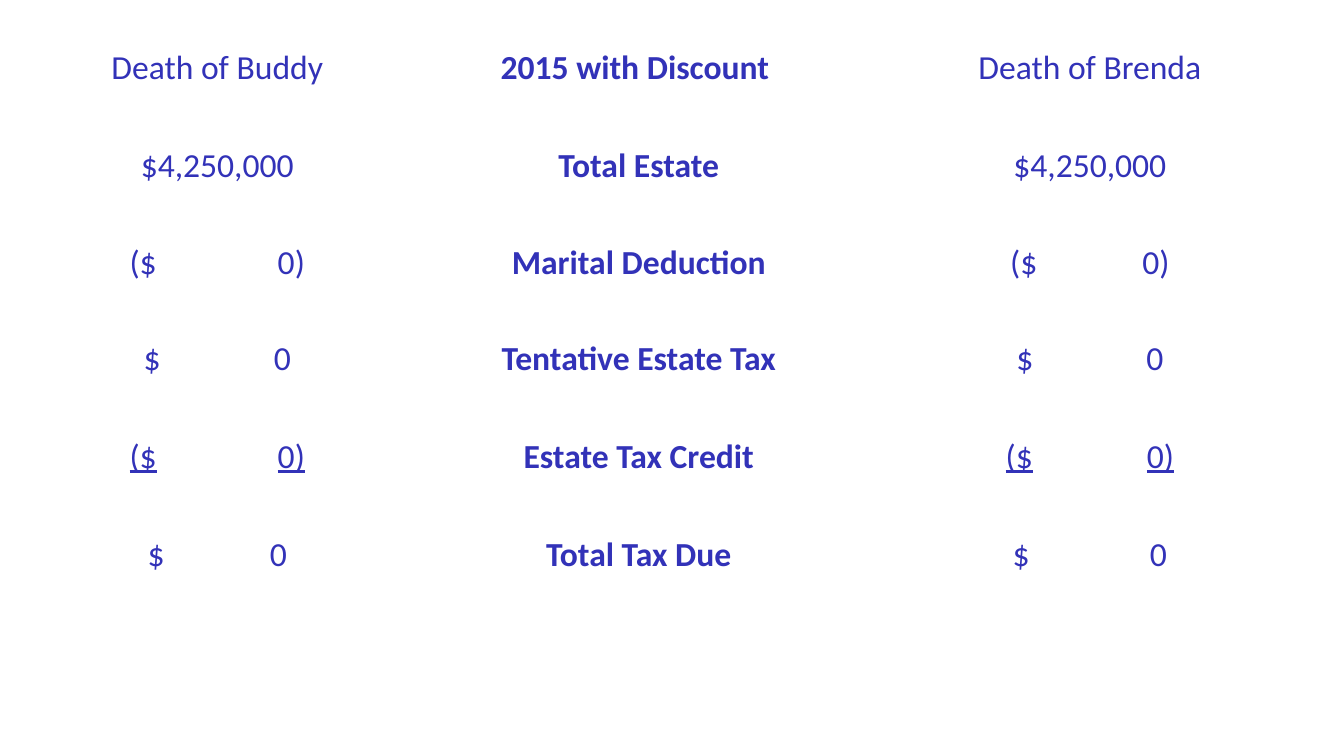
import pptx
import pptx.util
import pptx.dml.color
import pptx.enum.text
import pptx.oxml
import pptx.oxml.ns

INCH = pptx.util.Inches
ALIGN = pptx.enum.text.PP_ALIGN
NS = pptx.oxml.ns.nsdecls("a")

THEME = {"font": "Calibri", "size": 24, "ink": "3232B8", "back": "FFFFFF",
         "thin": 1, "thick": 3, "pad": 0.07}

# Grid, in inches
LEFT, TOP = 0.23, 0.47
COLS = [3.85, 4.51, 4.44]
ROWS = [0.97, 0.97, 0.95, 0.97, 0.97, 0.97]

# Each row: Buddy, label, Brenda; a pair is an amount with the width it spans
DATA = [
    ["Death of Buddy", "2015 with Discount ", "Death of Brenda"],
    ["$4,250,000", "Total Estate", "$4,250,000"],
    [("($\t0)", 1.74), "Marital Deduction", ("($\t0)", 1.58)],
    [("$\t0", 1.46), "Tentative Estate Tax", ("$\t0", 1.46)],
    [("($\t0)", 1.74), "Estate Tax Credit", ("($\t0)", 1.67)],
    [("$\t0", 1.38), "Total Tax Due", ("$\t0", 1.53)],
]
HEAD, CREDIT, TOTAL = 0, 4, 5


def write(cell, text, bold=False, line=False, wide=0, span=None):
    """Fill a cell; a span sets the amount between a left edge and a right tab."""
    cell.margin_left = cell.margin_right = INCH(THEME["pad"])
    cell.margin_top = cell.margin_bottom = 0
    par = cell.text_frame.paragraphs[0]
    par.alignment = ALIGN.CENTER
    if span:
        par.alignment = ALIGN.LEFT
        cell.margin_left = INCH((wide - span) / 2)
        par._p.get_or_add_pPr().append(pptx.oxml.parse_xml(
            f'<a:tabLst {NS}><a:tab pos="{INCH(span)}" algn="r"/></a:tabLst>'))
    run = par.add_run()
    run.text = text
    font = run.font
    font.name, font.size = THEME["font"], pptx.util.Pt(THEME["size"])
    font.bold, font.underline = bold, line
    font.color.rgb = pptx.dml.color.RGBColor.from_string(THEME["ink"])


def frame(cell, row):
    """Draw the cell's borders, heavier under the head and over the total."""
    heavy = {("B", HEAD), ("T", HEAD + 1), ("B", TOTAL - 1), ("T", TOTAL)}
    for side in "LRTB":
        size = THEME["thick" if (side, row) in heavy else "thin"]
        cell._tc.get_or_add_tcPr().append(pptx.oxml.parse_xml(
            f'<a:ln{side} {NS} w="{pptx.util.Pt(size)}"><a:solidFill>'
            f'<a:srgbClr val="{THEME["back"]}"/></a:solidFill></a:ln{side}>'))


# Slide
deck = pptx.Presentation()
deck.slide_width, deck.slide_height = INCH(13.33), INCH(7.5)
slide = deck.slides.add_slide(deck.slide_layouts[6])
back = pptx.dml.color.RGBColor.from_string(THEME["back"])
slide.background.fill.solid()
slide.background.fill.fore_color.rgb = back

# Table
table = slide.shapes.add_table(len(ROWS), len(COLS), INCH(LEFT), INCH(TOP),
                               INCH(sum(COLS)), INCH(sum(ROWS))).table
table.first_row = table.horz_banding = False
for col, wide in zip(table.columns, COLS):
    col.width = INCH(wide)
for row, high in zip(table.rows, ROWS):
    row.height = INCH(high)

# Cells
for r, items in enumerate(DATA):
    for c, item in enumerate(items):
        cell = table.cell(r, c)
        text, span = item if isinstance(item, tuple) else (item, None)
        write(cell, text, bold=c == 1, line=r == CREDIT and c != 1,
              wide=COLS[c], span=span)
        frame(cell, r)
        cell.fill.solid()
        cell.fill.fore_color.rgb = back

deck.save("out.pptx")
